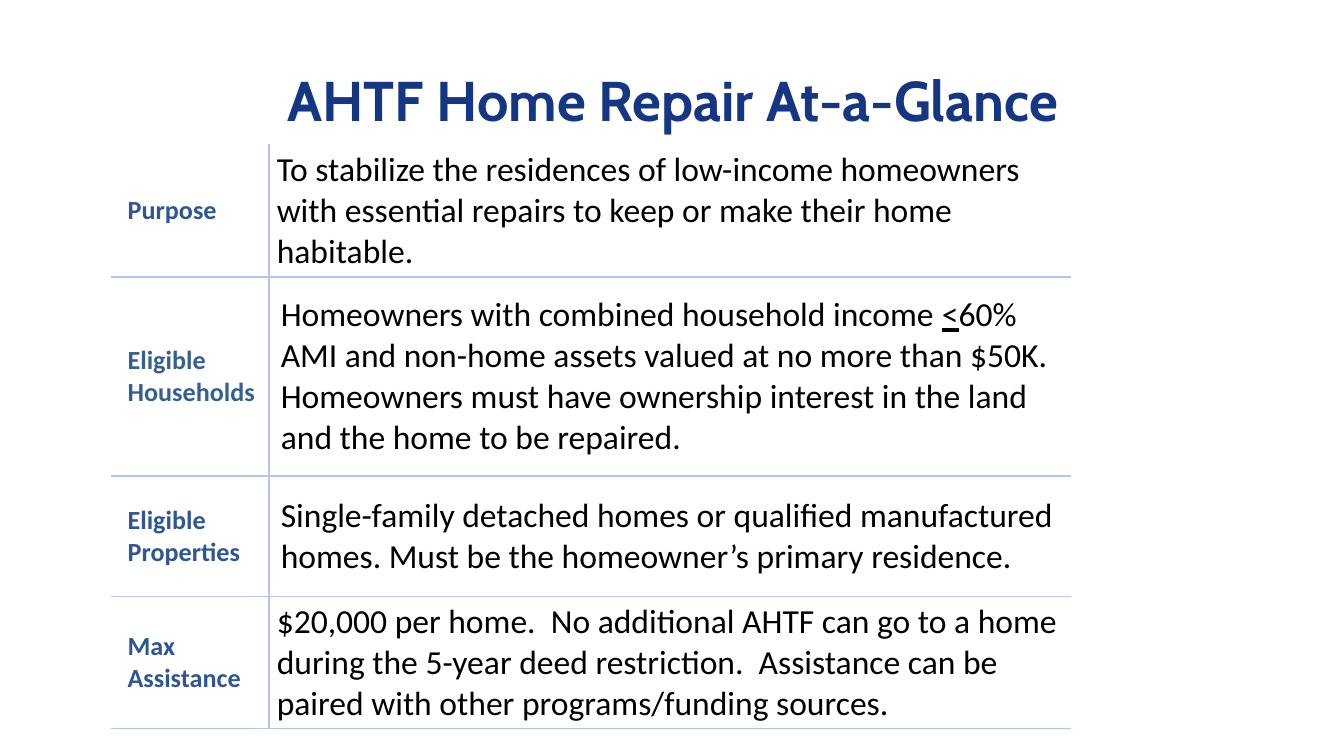
from lxml import etree
from pptx import Presentation
from pptx.dml.color import RGBColor
from pptx.enum.text import MSO_ANCHOR, PP_ALIGN
from pptx.oxml.ns import qn
from pptx.util import Inches, Pt

MIDDLE = MSO_ANCHOR.MIDDLE
CENTER = PP_ALIGN.CENTER

NAVY = RGBColor(0x15, 0x36, 0x83)
BLUE = RGBColor(0x2F, 0x55, 0x97)
STEEL = RGBColor(0x36, 0x5F, 0x91)
PALE = RGBColor(0xB4, 0xC6, 0xE7)
BLACK = RGBColor(0, 0, 0)
WHITE = RGBColor(0xFF, 0xFF, 0xFF)

WIDTHS = [1.17, 5.96]
HEIGHTS = [0.98, 1.48, 0.9, 0.98]

ROWS = [
    ("Purpose", BLUE, 0.06, 6, [
        ["To stabilize the residences of low-income homeowners with essential "
         "repairs to keep or make their home habitable."]]),
    ("Eligible Households", STEEL, 0.09, 0, [
        ["Homeowners with combined household income ", "<",
         "60% AMI and non-home assets valued at no more than $50K."],
        ["Homeowners must have ownership interest in the land and the home "
         "to be repaired."]]),
    ("Eligible Properties", BLUE, 0.09, 6, [
        ["Single-family detached homes or qualified manufactured homes. "
         "Must be the homeowner’s primary residence."]]),
    ("Max Assistance", BLUE, 0.06, 0, [
        ["$20,000 per home.  No additional AHTF can go to a home during the "
         "5-year deed restriction.  Assistance can be paired with other "
         "programs/funding sources."]]),
]


def add_run(para, text, font, size, color, bold):
    run = para.add_run()
    run.text = text
    run.font.name = font
    run.font.size = Pt(size)
    run.font.color.rgb = color
    run.font.bold = bold
    return run


def add_title(slide):
    title = slide.shapes.title
    title.left, title.top = Inches(1.77), Inches(0.19)
    title.width, title.height = Inches(6.47), Inches(1.09)
    frame = title.text_frame
    frame.vertical_anchor = MIDDLE
    para = frame.paragraphs[0]
    para.alignment = CENTER
    add_run(para, "AHTF Home Repair At-a-Glance", "Cabin", 30, NAVY, True)


def add_lines(cell, sides):
    props = cell._tc.get_or_add_tcPr()
    for side in sides:
        line = etree.SubElement(props, qn(f"a:ln{side}"), w=str(Pt(1)))
        fill = etree.SubElement(line, qn("a:solidFill"))
        etree.SubElement(fill, qn("a:srgbClr"), val=str(PALE))


def style_cell(cell, sides, margin):
    add_lines(cell, sides)
    cell.fill.solid()
    cell.fill.fore_color.rgb = WHITE
    cell.vertical_anchor = MIDDLE
    cell.margin_left = cell.margin_right = Inches(margin)
    cell.margin_top = cell.margin_bottom = 0


def fill_label(cell, text, color):
    para = cell.text_frame.paragraphs[0]
    para._p.get_or_add_pPr().set("marL", str(Inches(0.06)))
    add_run(para, text, "Calibri", 14, color, True)


def fill_body(cell, paras, gap):
    frame = cell.text_frame
    for i, parts in enumerate(paras):
        para = frame.add_paragraph() if i else frame.paragraphs[0]
        para.space_after = Pt(gap)
        for part in parts:
            run = add_run(para, part, "Calibri", 18, BLACK, False)
            run.font.underline = part == "<"


def add_grid(slide):
    table = slide.shapes.add_table(
        len(ROWS), len(WIDTHS), Inches(0.83), Inches(1.08),
        Inches(sum(WIDTHS)), Inches(sum(HEIGHTS))).table
    table.first_row = table.horz_banding = False
    for col, width in zip(table.columns, WIDTHS):
        col.width = Inches(width)
    for i, (label, color, margin, gap, paras) in enumerate(ROWS):
        table.rows[i].height = Inches(HEIGHTS[i])
        edges = "TB" if i else "B"
        left, right = table.cell(i, 0), table.cell(i, 1)
        style_cell(left, "R" + edges, 0.06)
        style_cell(right, "L" + edges, margin)
        fill_label(left, label, color)
        fill_body(right, paras, gap)


def main():
    deck = Presentation()
    deck.slide_width = Inches(10)
    deck.slide_height = deck.slide_width * 9 // 16
    slide = deck.slides.add_slide(deck.slide_layouts[5])
    add_title(slide)
    add_grid(slide)
    deck.save("out.pptx")


if __name__ == "__main__":
    main()
